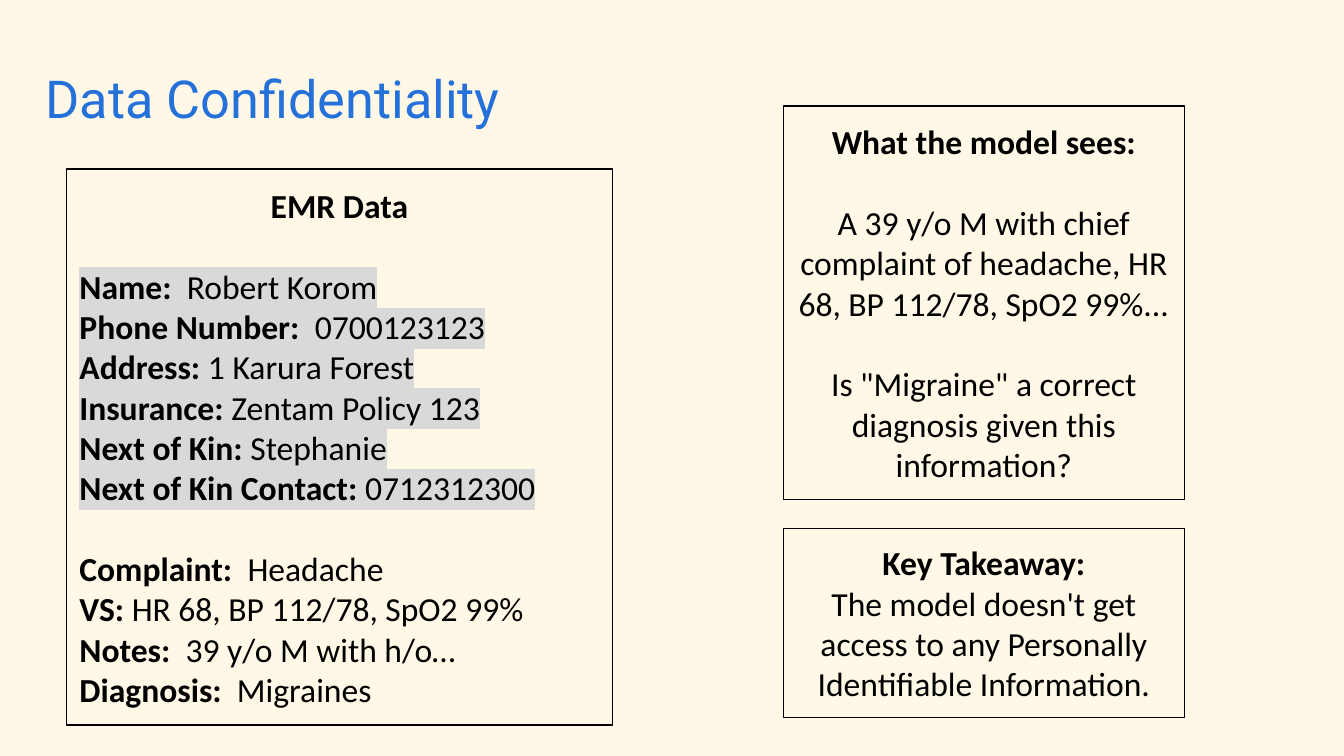
from lxml import etree
from pptx import Presentation
from pptx import util as u
from pptx.dml.color import RGBColor
from pptx.enum import shapes, text
from pptx.oxml.ns import qn

CREAM = RGBColor(0xFF, 0xF8, 0xE7)
BLUE = RGBColor(0x25, 0x71, 0xDA)
BLACK = RGBColor(0, 0, 0)
GREY = RGBColor(0xD9, 0xD9, 0xD9)
LINE_GAP = 21.6
LEFT, CENTER = text.PP_ALIGN.LEFT, text.PP_ALIGN.CENTER


class ConfidentialitySlide:
    def __init__(self, deck):
        self.slide = deck.slides.add_slide(deck.slide_layouts[6])
        background = self.slide.background.fill
        background.solid()
        background.fore_color.rgb = CREAM

    def style(self, run, size, font, color, bold=False):
        run.font.size = u.Pt(size)
        run.font.name = font
        run.font.color.rgb = color
        run.font.bold = bold

    def highlight(self, run):
        latin = run.font._element.find(qn("a:latin"))
        marker = etree.Element(qn("a:highlight"))
        etree.SubElement(marker, qn("a:srgbClr"), val=str(GREY))
        latin.addprevious(marker)

    def title(self, wording, left, top, width, height):
        heading = self.slide.shapes.add_textbox(*map(u.Pt, (left, top, width, height)))
        frame = heading.text_frame
        frame.word_wrap = True
        frame.margin_left = frame.margin_right = 0
        frame.margin_top = frame.margin_bottom = 0
        frame.text = wording
        self.style(frame.paragraphs[0].runs[0], 28, "Roboto", BLUE)

    def panel(self, left, top, width, height):
        panel = self.slide.shapes.add_shape(
            shapes.MSO_SHAPE.RECTANGLE, *map(u.Pt, (left, top, width, height)))
        panel.shadow.inherit = False
        panel.fill.background()
        panel.line.color.rgb = BLACK
        panel.line.width = u.Pt(0.75)
        frame = panel.text_frame
        frame.word_wrap = True
        frame.vertical_anchor = text.MSO_ANCHOR.MIDDLE
        frame.margin_left = frame.margin_right = u.Pt(7.2)
        frame.margin_top = frame.margin_bottom = u.Pt(7.2)
        return frame

    def paragraph(self, frame, label="", value="", align=CENTER, gap=False, private=False):
        paragraph = frame.paragraphs[0]
        if paragraph.runs:
            paragraph = frame.add_paragraph()
        paragraph.alignment = align
        if gap:
            paragraph.space_before = u.Pt(LINE_GAP)
        for wording, bold in ((label, True), (value, False)):
            if wording:
                run = paragraph.add_run()
                run.text = wording
                self.style(run, 18, "Calibri", BLACK, bold)
                if private:
                    self.highlight(run)

    def records(self, frame, rows, private):
        for index, (label, value) in enumerate(rows):
            self.paragraph(frame, label, value, LEFT, index == 0, private)


def main():
    deck = Presentation()
    deck.slide_width, deck.slide_height = u.Pt(720), u.Pt(405)
    page = ConfidentialitySlide(deck)
    page.title("Data Confidentiality", 24.5, 35.3, 671, 33.8)

    emr = page.panel(35.5, 90.5, 292.75, 298)
    page.paragraph(emr, "EMR Data")
    page.records(emr, [
        ("Name:  ", "Robert Korom"),
        ("Phone Number:  ", "0700123123"),
        ("Address:", " 1 Karura Forest"),
        ("Insurance: ", "Zentam Policy 123"),
        ("Next of Kin:", " Stephanie"),
        ("Next of Kin Contact: ", "0712312300"),
    ], private=True)
    page.records(emr, [
        ("Complaint:  ", "Headache"),
        ("VS: ", "HR 68, BP 112/78, SpO2 99%"),
        ("Notes:  ", "39 y/o M with h/o…"),
        ("Diagnosis:  ", "Migraines"),
    ], private=False)

    model_view = page.panel(419.75, 56.75, 214.75, 210.75)
    page.paragraph(model_view, "What the model sees:")
    page.paragraph(model_view, value="A 39 y/o M with chief complaint of headache, "
                   "HR 68, BP 112/78, SpO2 99%...", gap=True)
    page.paragraph(model_view, value='Is "Migraine" a correct diagnosis given this '
                   "information?", gap=True)

    takeaway = page.panel(419.75, 283, 214.75, 101.5)
    page.paragraph(takeaway, "Key Takeaway:")
    page.paragraph(takeaway, value="The model doesn't get access to any Personally "
                   "Identifiable Information.")
    deck.save("out.pptx")


if __name__ == "__main__":
    main()
